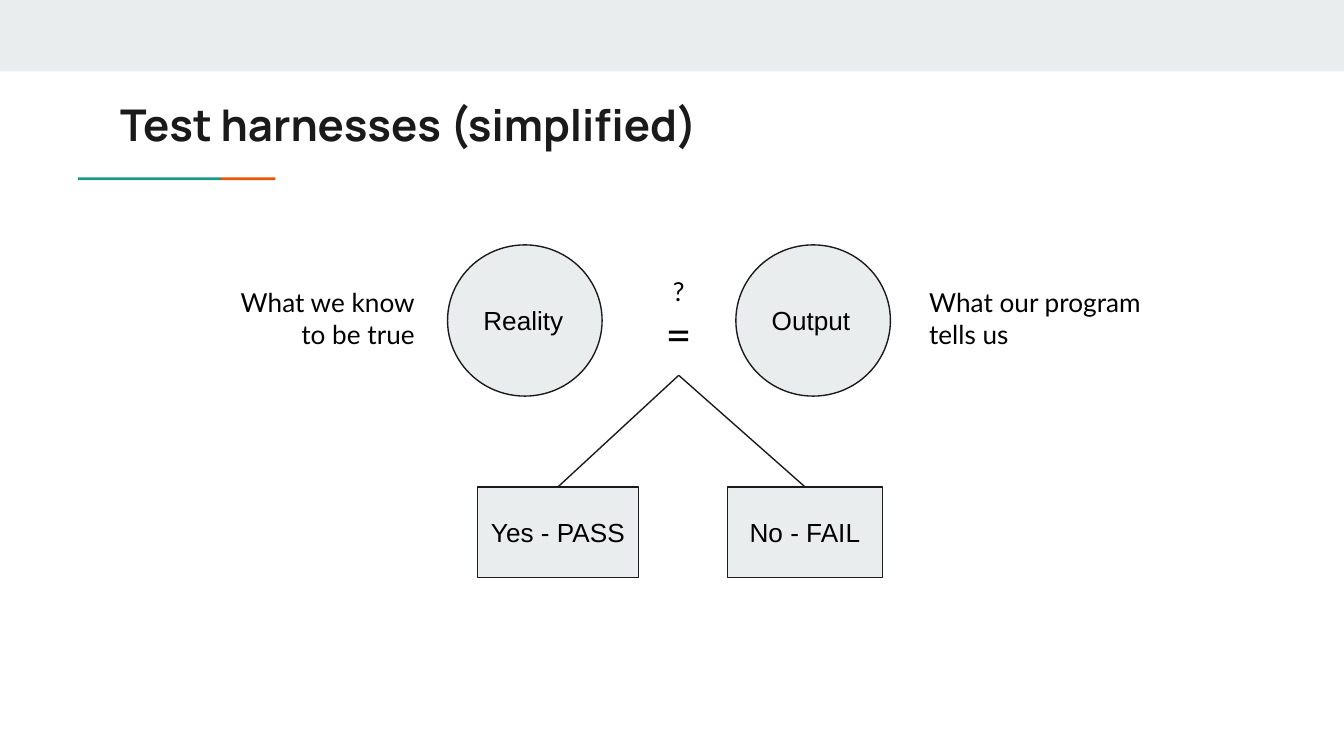
"""Build a slide that sketches a simplified test harness."""
from lxml.etree import SubElement
from pptx import Presentation
from pptx.dml.color import RGBColor
from pptx.enum.shapes import MSO_CONNECTOR, MSO_SHAPE
from pptx.enum.text import MSO_ANCHOR, PP_ALIGN
from pptx.oxml.ns import qn
from pptx.util import Inches, Pt

PALE = RGBColor(0xE9, 0xED, 0xEE)
INK = RGBColor(0x1A, 0x1A, 0x1A)
BLACK = RGBColor(0x00, 0x00, 0x00)
TEAL = RGBColor(0x1A, 0x99, 0x88)
ORANGE = RGBColor(0xEB, 0x56, 0x00)

deck = Presentation()
deck.slide_width = Inches(10)
deck.slide_height = deck.slide_width * 9 // 16
COL, ROW = deck.slide_width / 100, deck.slide_height / 100
slide = deck.slides.add_slide(deck.slide_layouts[6])
shapes = slide.shapes


def add_panel(preset, left, top, width, height, fill, outline=None):
    panel = shapes.add_shape(preset, int(left * COL), int(top * ROW),
                             int(width * COL), int(height * ROW))
    panel.shadow.inherit = False
    panel.fill.solid()
    panel.fill.fore_color.rgb = fill
    if outline is None:
        panel.line.fill.background()
    else:
        panel.line.color.rgb = outline
        panel.line.width = Pt(0.75)
    return panel


def write(holder, lines, font, align, color=BLACK, bold=False, anchor=MSO_ANCHOR.TOP):
    frame = holder.text_frame
    frame.word_wrap = True
    frame.vertical_anchor = anchor
    frame.margin_left = frame.margin_right = Inches(0.1)
    frame.margin_top = frame.margin_bottom = Inches(0.1)
    for index, (words, size) in enumerate(lines):
        paragraph = frame.add_paragraph() if index else frame.paragraphs[0]
        paragraph.text = words
        paragraph.alignment = align
        paragraph.font.name = font
        paragraph.font.size = Pt(size)
        paragraph.font.bold = bold
        paragraph.font.color.rgb = color


add_panel(MSO_SHAPE.RECTANGLE, 0, 0, 100, 9.45, PALE)
for left, width, accent in ((5.8, 10.65, TEAL), (16.45, 4.05, ORANGE)):
    add_panel(MSO_SHAPE.RECTANGLE, left, 23.45, width, 0.4, accent)

title = shapes.add_textbox(int(7.95 * COL), int(11.2 * ROW), int(84.1 * COL), int(10.5 * ROW))
write(title, [("Test harnesses (simplified)", 23.4)], "Manrope", PP_ALIGN.LEFT, INK, True)

for words, left in (("Reality", 33.3), ("Output", 54.75)):
    circle = add_panel(MSO_SHAPE.OVAL, left, 32.4, 11.5, 20, PALE, INK)
    write(circle, [(words, 14)], "Arial", PP_ALIGN.LEFT, anchor=MSO_ANCHOR.MIDDLE)

captions = (
    ([("?", 14), ("=", 24)], 47.5, 34.7, 6, 15, PP_ALIGN.CENTER),
    ([("What we know\vto be true", 14)], 14.75, 36.15, 17.1, 12, PP_ALIGN.RIGHT),
    ([("What our program tells us", 14)], 68.15, 36.15, 20.4, 12, PP_ALIGN.LEFT),
)
for lines, left, top, width, height, align in captions:
    caption = shapes.add_textbox(int(left * COL), int(top * ROW),
                                 int(width * COL), int(height * ROW))
    write(caption, lines, "Lato", align)

FORK_X, FORK_Y, VERDICT_TOP = 50.5, 49.65, 64.4
for words, left, width in (("Yes - PASS", 35.52, 12), ("No - FAIL", 54.12, 11.55)):
    branch = shapes.add_connector(
        MSO_CONNECTOR.STRAIGHT, int(FORK_X * COL), int(FORK_Y * ROW),
        int((left + width / 2) * COL), int(VERDICT_TOP * ROW))
    branch.line.color.rgb = INK
    branch.line.width = Pt(0.75)
    SubElement(branch._element.spPr, qn("a:effectLst"))
    verdict = add_panel(MSO_SHAPE.RECTANGLE, left, VERDICT_TOP, width, 12, PALE, INK)
    write(verdict, [(words, 14)], "Arial", PP_ALIGN.CENTER, anchor=MSO_ANCHOR.MIDDLE)

deck.save("out.pptx")
